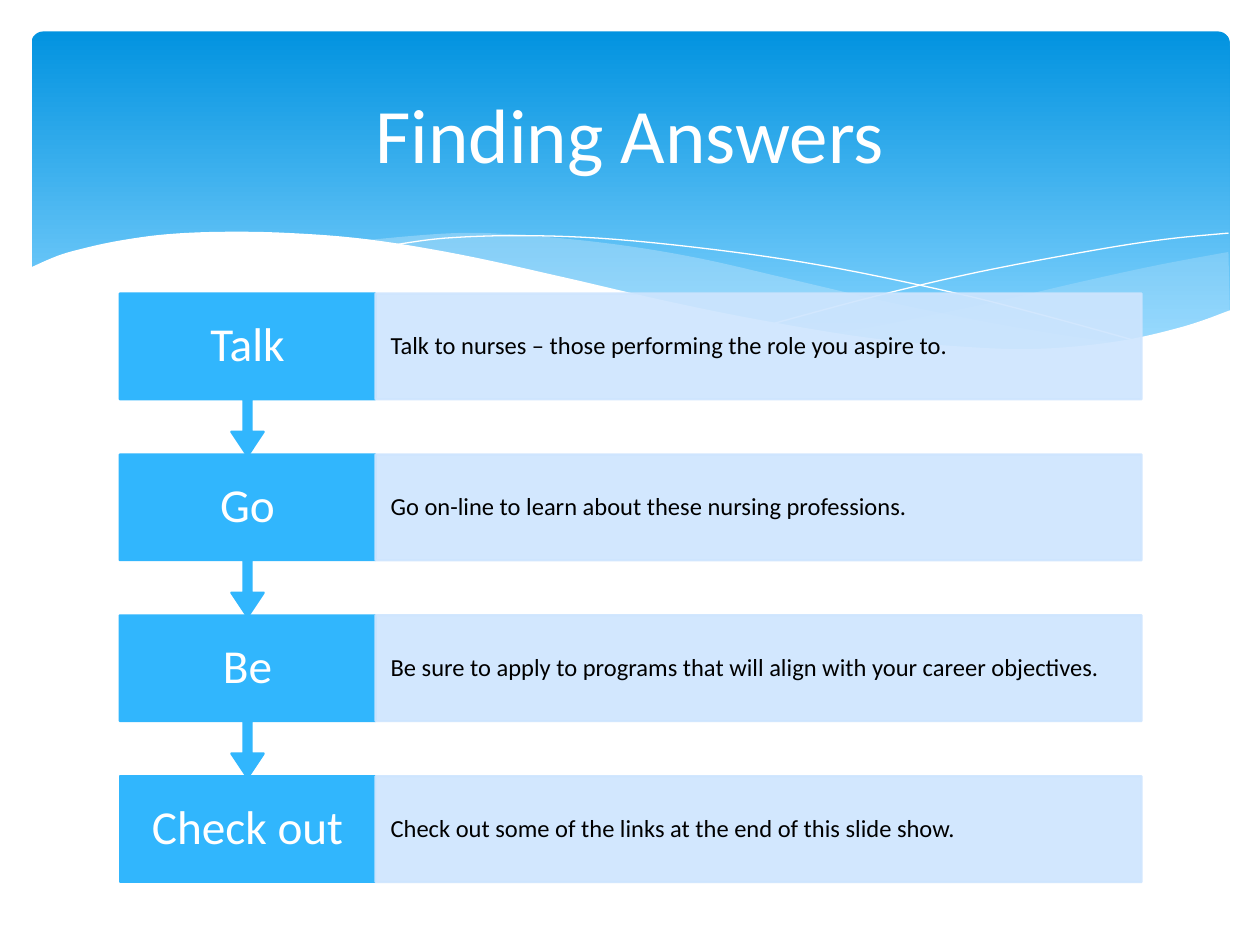
from pptx import Presentation
from pptx.dml.color import RGBColor
from pptx.enum.shapes import MSO_SHAPE
from pptx.enum.text import MSO_ANCHOR, PP_ALIGN
from pptx.oxml.ns import qn
from pptx.util import Inches, Pt
from lxml import etree

WHITE = RGBColor(0xFF, 0xFF, 0xFF)
BLACK = RGBColor(0x00, 0x00, 0x00)
SKY_TOP = RGBColor(0x02, 0x93, 0xE0)
SKY_BOTTOM = RGBColor(0x83, 0xD3, 0xFE)
MIST = RGBColor(0xC6, 0xE7, 0xFC)
STEP_BLUE = RGBColor(0x31, 0xB6, 0xFD)
PALE_BLUE = RGBColor(0xCE, 0xE5, 0xFE)

COLUMNS, ROWS = 100, 75  # grid over the whole slide

# Each wave edge is a list of (column, row) points joined by a smooth curve
RIGHT_CREST = [(97.5, 20), (92.1, 21), (86.1, 22.3), (77.9, 24.2), (70.6, 25.7), (66.1, 26.5)]
RIGHT_TROUGH = [(66.1, 26.5), (70.5, 27.1), (75.7, 27.6), (81.4, 27.8), (87.2, 27.4),
                (92.1, 26.5), (94.9, 25.7), (97.6, 24.7)]
MIDDLE_CREST = [(89.3, 27.3), (83.7, 26.5), (77.5, 25.4), (70.6, 24), (62.9, 22.2),
                (55.5, 20.5), (48.9, 19.4), (42, 18.7), (36.1, 18.5), (28.6, 19.1)]
MIDDLE_TROUGH = [(28.6, 19.1), (36.2, 20.3), (44.9, 22.2), (56.6, 24.8), (65, 26.4),
                 (72.2, 27.4), (78.5, 27.8), (83.8, 27.8), (89.3, 27.3)]
FALLING_LINE = [(30.9, 19.5), (35.3, 18.9), (41.6, 18.7), (48.9, 19), (58.2, 20),
                (66.5, 21.3), (76, 23.3), (83.1, 25.1), (90.7, 27.2)]
RISING_LINE = [(61.3, 25.7), (69.5, 23.5), (77.6, 21.6), (86.6, 19.9), (92.4, 19), (97.5, 18.5)]
PAGE_EDGE = [(97.7, 24.6), (94, 25.9), (88.7, 27.1), (82.3, 27.7), (76.1, 27.5),
             (68.8, 26.8), (60.3, 25.4), (52.9, 23.9), (44.7, 22), (36.5, 20.2),
             (29.2, 19), (23, 18.5), (17.7, 18.4), (13.2, 18.6), (9.5, 19.1),
             (6.7, 19.7), (4.6, 20.3), (2.3, 21.3)]
PAGE_CORNERS = [(2.3, 32.9), (97.7, 32.9)]

STEPS = [
    ("Talk", "Talk to nurses – those performing the role you aspire to."),
    ("Go", "Go on-line to learn about these nursing professions."),
    ("Be", "Be sure to apply to programs that will align with your career objectives."),
    ("Check out", "Check out some of the links at the end of this slide show."),
]
STEP_LEFT, STEP_TOP, STEP_PITCH = 9.5, 23.3, 12.77
LABEL_WIDTH, DETAIL_WIDTH = 20.3, 60.8
BOX_HEIGHT, CALLOUT_HEIGHT = 8.4, 12.9


def smooth(points, pieces=6):
    """Catmull-Rom curve through the points."""
    padded = [points[0], *points, points[-1]]
    curve = [points[0]]
    for a, b, c, d in zip(padded, padded[1:], padded[2:], padded[3:]):
        for piece in range(1, pieces + 1):
            t = piece / pieces
            curve.append(tuple(
                (2 * q + (r - p) * t + (2 * p - 5 * q + 4 * r - s) * t ** 2
                 + (3 * q - p - 3 * r + s) * t ** 3) / 2
                for p, q, r, s in zip(a, b, c, d)))
    return curve


class Deck:
    font = "Calibri"

    def __init__(self, width, height):
        self.presentation = Presentation()
        self.presentation.slide_width = Inches(width)
        self.presentation.slide_height = Inches(height)
        self.column = self.presentation.slide_width / COLUMNS
        self.row = self.presentation.slide_height / ROWS
        self.slide = self.presentation.slides.add_slide(self.presentation.slide_layouts[6])

    def place(self, left, top, width, height):
        return [round(length * unit) for length, unit in
                zip((left, top, width, height), (self.column, self.row) * 2)]

    def paint(self, shape, fill=None, line=None, weight=1.25, opacity=100):
        shape.shadow.inherit = False
        for part, color in ((shape.fill, fill), (shape.line.fill, line)):
            if color is None:
                part.background()
            else:
                part.solid()
                part.fore_color.rgb = color
        if line is not None:
            shape.line.width = Pt(weight)
        if opacity < 100:
            for color in shape._element.spPr.iter(qn("a:srgbClr")):
                etree.SubElement(color, qn("a:alpha"), val=str(opacity * 1000))

    def set_text(self, shape, text, size, color, align, side=0.1, edge=0.05, spacing=None):
        frame = shape.text_frame
        frame.text = text
        frame.word_wrap = True
        frame.vertical_anchor = MSO_ANCHOR.MIDDLE
        frame.margin_left = frame.margin_right = Inches(side)
        frame.margin_top = frame.margin_bottom = Inches(edge)
        paragraph = frame.paragraphs[0]
        paragraph.alignment = align
        paragraph.line_spacing = spacing
        font = paragraph.runs[0].font
        font.name, font.size, font.color.rgb = self.font, Pt(size), color

    def title(self, text, *place):
        box = self.slide.shapes.add_textbox(*self.place(*place))
        self.set_text(box, text, 44, WHITE, PP_ALIGN.CENTER)

    def sky(self, *place):
        band = self.slide.shapes.add_shape(MSO_SHAPE.ROUNDED_RECTANGLE, *self.place(*place))
        band.adjustments[0] = 0.034
        self.paint(band)
        band.fill.gradient()
        band.fill.gradient_angle = 270
        for stop, position, color in zip(band.fill.gradient_stops, (0, 0.9), (SKY_TOP, SKY_BOTTOM)):
            stop.position = position
            stop.color.rgb = color

    def outline(self, points, closed=True, **style):
        spots = [(round(x * self.column), round(y * self.row)) for x, y in points]
        builder = self.slide.shapes.build_freeform(*spots[0])
        builder.add_line_segments(spots[1:], close=closed)
        self.paint(builder.convert_to_shape(), **style)

    def label(self, kind, text, *place):
        box = self.slide.shapes.add_shape(kind, *self.place(*place))
        if kind == MSO_SHAPE.DOWN_ARROW_CALLOUT:
            for index, value in enumerate((0.05, 0.1, 0.15, 0.65)):
                box.adjustments[index] = value
        self.paint(box, STEP_BLUE, STEP_BLUE)
        self.set_text(box, text, 27, WHITE, PP_ALIGN.CENTER, 0.14, 0.21, 0.9)

    def detail(self, text, *place):
        box = self.slide.shapes.add_shape(MSO_SHAPE.RECTANGLE, *self.place(*place))
        self.paint(box, PALE_BLUE, PALE_BLUE, opacity=90)
        self.set_text(box, text, 14, BLACK, PP_ALIGN.LEFT, 0.12, 0.19, 0.9)


def main():
    deck = Deck(10, 7.5)

    # Sky band with waves
    deck.sky(2.5, 2.5, 95.1, 27)
    deck.outline(smooth(RIGHT_CREST) + smooth(RIGHT_TROUGH), fill=MIST, opacity=29)
    deck.outline(smooth(MIDDLE_CREST) + smooth(MIDDLE_TROUGH), fill=MIST, opacity=40)
    for thread in (FALLING_LINE, RISING_LINE):
        deck.outline(smooth(thread), closed=False, line=WHITE, weight=0)
    deck.outline(smooth(PAGE_EDGE) + PAGE_CORNERS, fill=WHITE)

    deck.title("Finding Answers", 5, 3.7, 90, 13.7)

    # Steps, from the last up so that each arrow lies over the next box
    for index, (label, detail) in reversed(list(enumerate(STEPS))):
        top = STEP_TOP + index * STEP_PITCH
        if index == len(STEPS) - 1:
            kind, height = MSO_SHAPE.RECTANGLE, BOX_HEIGHT
        else:
            kind, height = MSO_SHAPE.DOWN_ARROW_CALLOUT, CALLOUT_HEIGHT
        deck.label(kind, label, STEP_LEFT, top, LABEL_WIDTH, height)
        deck.detail(detail, STEP_LEFT + LABEL_WIDTH, top, DETAIL_WIDTH, BOX_HEIGHT)

    deck.presentation.save("out.pptx")


if __name__ == "__main__":
    main()
